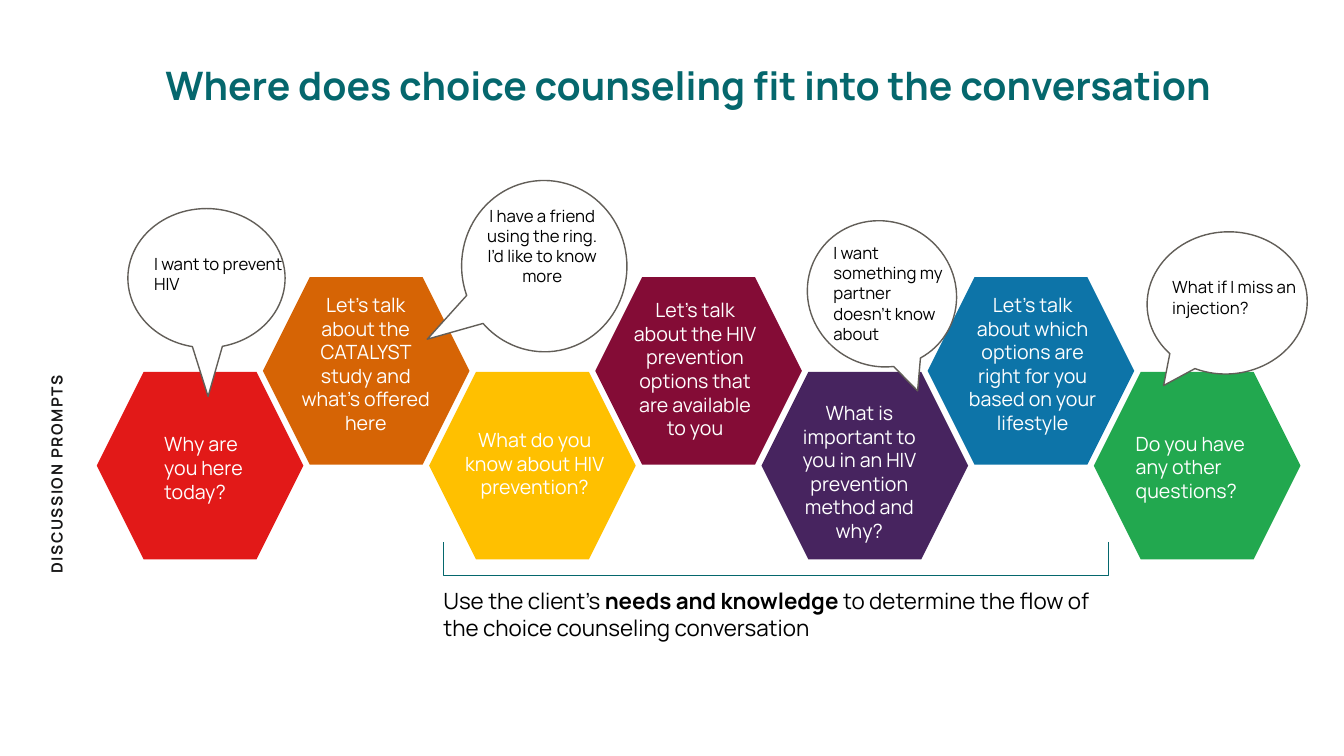
from pptx import Presentation
from pptx.dml.color import RGBColor
from pptx.enum import shapes, text
from pptx.util import Pt

FONT = "Manrope"
TEAL = RGBColor(0x05, 0x67, 0x6D)
RED = RGBColor(0xE2, 0x19, 0x18)
ORANGE = RGBColor(0xD6, 0x64, 0x05)
YELLOW = RGBColor(0xFF, 0xC0, 0x00)
MAROON = RGBColor(0x84, 0x0C, 0x36)
PURPLE = RGBColor(0x47, 0x24, 0x5F)
BLUE = RGBColor(0x0D, 0x74, 0xA8)
GREEN = RGBColor(0x22, 0xA8, 0x4F)
WHITE = RGBColor(0xFF, 0xFF, 0xFF)
BLACK = RGBColor(0x00, 0x00, 0x00)
INK = RGBColor(0x18, 0x17, 0x17)
GREY = RGBColor(0x62, 0x5E, 0x58)

LEFT, CENTER = text.PP_ALIGN.LEFT, text.PP_ALIGN.CENTER

# Hexagon chain: even steps to the right, alternating low and high
HEX_LEFT, HEX_STEP = 69.1, 118.7
HEX_WIDTH, HEX_HEIGHT = 147.6, 133.9
HEX_TOPS = (265.7, 198)

# Colour, prompt, alignment and text box (left, top, width, height)
STEPS = [
    (RED, "Why are you here today?", LEFT, (110.2, 305.3, 87.8, 58.3)),
    (ORANGE, "Let’s talk about the CATALYST study and what’s offered here",
     CENTER, (206.6, 205.9, 109.4, 108.7)),
    (YELLOW, "What do you know about HIV prevention?",
     CENTER, (316.1, 302.4, 131.8, 58.3)),
    (MAROON, "Let’s talk about the HIV prevention options that are available to you",
     CENTER, (441.4, 209.5, 110.2, 108.7)),
    (PURPLE, "What is important to you in an HIV prevention method and why?",
     CENTER, (560.2, 283, 107.3, 108.7)),
    (BLUE, "Let’s talk about which options are right for you based on your lifestyle",
     CENTER, (684, 205.9, 107.3, 108.7)),
    (GREEN, "Do you have any other questions?", LEFT, (804.2, 304.6, 118.1, 58.3)),
]

# Bubble box, rotation, tail, reply, alignment and text box
REPLIES = [
    ((327.6, 131, 122.4, 118.1), 267, (-0.39, -0.73),
     "I have a friend using the ring. I’d like to know more",
     CENTER, (339.1, 143.3, 96.5, 79.9)),
    ((576, 158.4, 108, 103), 32, (0.54, 0.44),
     "I want something my partner doesn’t know about",
     LEFT, (588.2, 169.9, 95.8, 79.9)),
    ((825.8, 159.1, 101.5, 114.5), 85, (0.54, 0.44),
     "What if I miss an injection?", LEFT, (830.2, 194.4, 103, 36)),
    ((91.4, 149, 112.3, 99.4), 0, (0.01, 0.85),
     "I want to prevent HIV", LEFT, (103, 177.8, 110.2, 36)),
]


def points(box):
    return [Pt(length) for length in box]


def add_run(paragraph, words, size, color, bold=False):
    run = paragraph.add_run()
    run.text = words
    run.font.name = FONT
    run.font.size = Pt(size)
    run.font.bold = bold
    run.font.color.rgb = color
    return run


def add_label(slide, box, size, color, *parts, align=LEFT):
    """Add a wrapped text box; each part is (words, bold)."""
    label = slide.shapes.add_textbox(*points(box))
    frame = label.text_frame
    frame.word_wrap = True
    frame.auto_size = text.MSO_AUTO_SIZE.SHAPE_TO_FIT_TEXT
    paragraph = frame.paragraphs[0]
    paragraph.alignment = align
    for words, bold in parts:
        add_run(paragraph, words, size, color, bold)
    return label


def add_outline(slide, kind, box, fill=None, line=None, weight=1.0, adjust=()):
    shape = slide.shapes.add_shape(kind, *points(box))
    shape.shadow.inherit = False
    for index, value in enumerate(adjust):
        shape.adjustments[index] = value
    if fill is None:
        shape.fill.background()
    else:
        shape.fill.solid()
        shape.fill.fore_color.rgb = fill
    if line is None:
        shape.line.fill.background()
    else:
        shape.line.color.rgb = line
        shape.line.width = Pt(weight)
    return shape


def format_title(title):
    title.left, title.top, title.width, title.height = points((54.7, 18, 902.9, 90))
    frame = title.text_frame
    frame.word_wrap = True
    frame.auto_size = text.MSO_AUTO_SIZE.NONE
    frame.vertical_anchor = text.MSO_ANCHOR.MIDDLE
    frame.margin_left = Pt(63.4)
    paragraph = frame.paragraphs[0]
    paragraph.alignment = LEFT
    paragraph.line_spacing = 0.9
    add_run(paragraph, "Where does choice counseling fit into the conversation",
            28, TEAL, True)


def main():
    deck = Presentation()
    deck.slide_width, deck.slide_height = Pt(960), Pt(540)
    slide = deck.slides.add_slide(deck.slide_layouts[5])
    format_title(slide.shapes.title)

    # Conversation steps
    for i, (color, *_) in enumerate(STEPS):
        box = (HEX_LEFT + i * HEX_STEP, HEX_TOPS[i % 2], HEX_WIDTH, HEX_HEIGHT)
        add_outline(slide, shapes.MSO_SHAPE.HEXAGON, box, fill=color)
    for _, prompt, align, box in STEPS:
        add_label(slide, box, 14, WHITE, (prompt, False), align=align)

    # Client replies
    for bubble_box, rotation, tail, reply, align, box in REPLIES:
        bubble = add_outline(slide, shapes.MSO_SHAPE.OVAL_CALLOUT, bubble_box,
                             fill=WHITE, line=GREY, adjust=tail)
        bubble.rotation = rotation
        add_label(slide, box, 12, BLACK, (reply, False), align=align)

    # Bracket and advice under the middle steps
    add_label(slide, (309.6, 416.2, 495.4, 46.1), 16, BLACK,
              ("Use the client’s ", False),
              ("needs and knowledge", True),
              (" to determine the flow of the choice counseling conversation", False))
    bracket = add_outline(slide, shapes.MSO_SHAPE.RIGHT_BRACKET,
                          (542.2, 161.3, 23.8, 475.2),
                          line=TEAL, weight=0.5, adjust=(0,))
    bracket.rotation = 90

    # Side heading, letterspaced
    heading = add_label(slide, (-77, 288.7, 235.4, 20.9), 11, INK,
                        ("DISCUSSION PROMPTS", True))
    heading.rotation = 270
    heading_run = heading.text_frame.paragraphs[0].runs[0]
    heading_run._r.get_or_add_rPr().set("spc", "110")

    deck.save("out.pptx")


if __name__ == "__main__":
    main()
